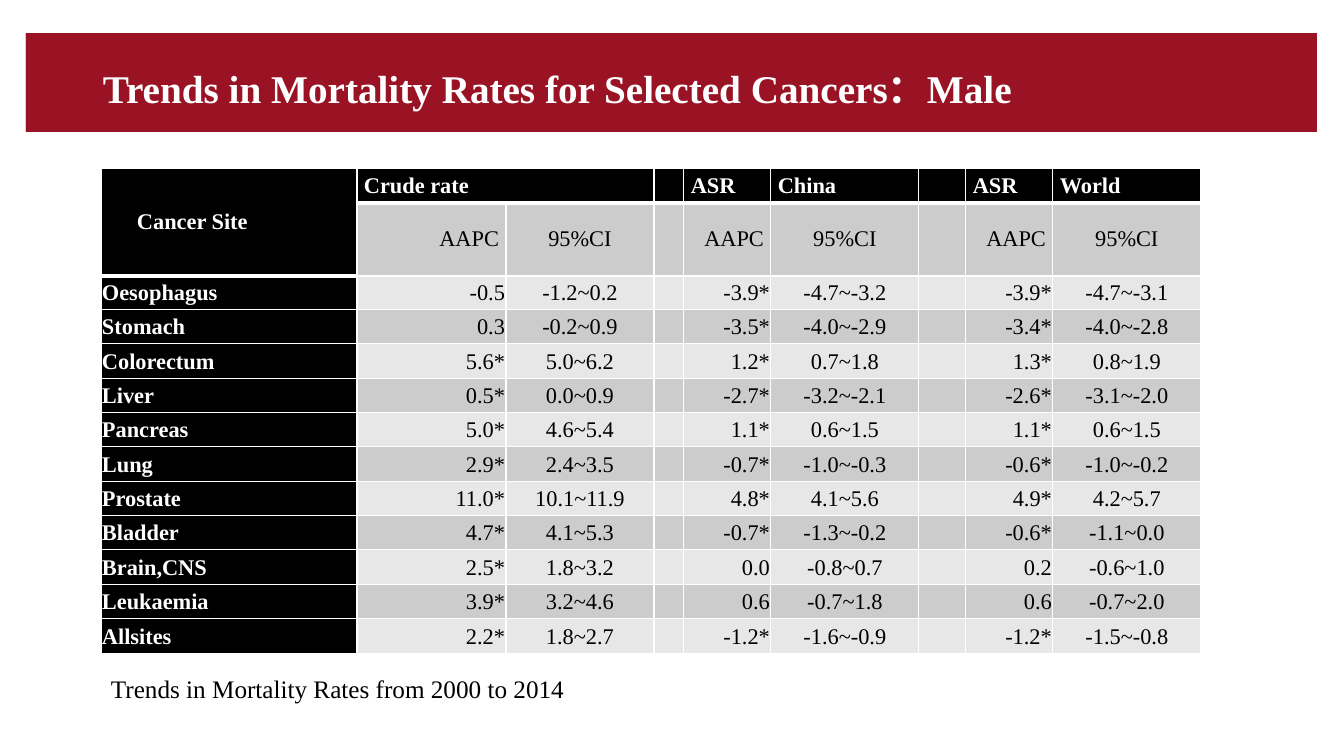
"""Build a slide with a table of mortality trends for selected cancers in men."""
from lxml import etree
from pptx import Presentation
from pptx.dml.color import RGBColor
from pptx.enum.shapes import MSO_SHAPE
from pptx.enum.text import MSO_ANCHOR, PP_ALIGN
from pptx.oxml.ns import qn
from pptx.util import Pt

PX = 914400 / 100.8
RECT = MSO_SHAPE.RECTANGLE
MIDDLE = MSO_ANCHOR.MIDDLE
LEFT, CENTER, RIGHT = PP_ALIGN.LEFT, PP_ALIGN.CENTER, PP_ALIGN.RIGHT
RED, WHITE, BLACK = "991324", "FFFFFF", "000000"
BANDS = ["E7E7E7", "CCCCCC"]


def px(n):
    return round(n * PX)


def write(tf, text, size=16, color=BLACK, bold=False, align=LEFT, spacing=None):
    p = tf.paragraphs[0]
    p.alignment = align
    p.line_spacing = spacing
    r = p.add_run()
    r.text = text
    r.font.name = "Times New Roman"
    r.font.size = Pt(size)
    r.font.bold = bold
    r.font.color.rgb = RGBColor.from_string(color)


prs = Presentation()
prs.slide_width, prs.slide_height = px(1344), px(756)
s = prs.slides.add_slide(prs.slide_layouts[6])

for width in (1291, 900):
    sp = s.shapes.add_shape(RECT, px(26), px(33), px(width), px(99))
    sp.shadow.inherit = False
    sp.fill.solid()
    sp.fill.fore_color.rgb = RGBColor.from_string(RED)
    sp.line.fill.background()

tf = s.shapes.add_textbox(px(93), px(44), px(1126), px(94)).text_frame
tf.word_wrap = True
tf.vertical_anchor = MIDDLE
write(tf, "Trends in Mortality Rates for Selected Cancers：Male",
      size=28, color=WHITE, bold=True, spacing=0.9)

rows = [
    ["Cancer Site", "Crude rate", "", "ASR", "China", "ASR", "World"],
    ["", "AAPC", "95%CI", "AAPC", "95%CI", "AAPC", "95%CI"],
    ["Oesophagus", "-0.5", "-1.2~0.2", "-3.9*", "-4.7~-3.2", "-3.9*", "-4.7~-3.1"],
    ["Stomach", "0.3", "-0.2~0.9", "-3.5*", "-4.0~-2.9", "-3.4*", "-4.0~-2.8"],
    ["Colorectum", "5.6*", "5.0~6.2", "1.2*", "0.7~1.8", "1.3*", "0.8~1.9"],
    ["Liver", "0.5*", "0.0~0.9", "-2.7*", "-3.2~-2.1", "-2.6*", "-3.1~-2.0"],
    ["Pancreas", "5.0*", "4.6~5.4", "1.1*", "0.6~1.5", "1.1*", "0.6~1.5"],
    ["Lung", "2.9*", "2.4~3.5", "-0.7*", "-1.0~-0.3", "-0.6*", "-1.0~-0.2"],
    ["Prostate", "11.0*", "10.1~11.9", "4.8*", "4.1~5.6", "4.9*", "4.2~5.7"],
    ["Bladder", "4.7*", "4.1~5.3", "-0.7*", "-1.3~-0.2", "-0.6*", "-1.1~0.0"],
    ["Brain,CNS", "2.5*", "1.8~3.2", "0.0", "-0.8~0.7", "0.2", "-0.6~1.0"],
    ["Leukaemia", "3.9*", "3.2~4.6", "0.6", "-0.7~1.8", "0.6", "-0.7~2.0"],
    ["Allsites", "2.2*", "1.8~2.7", "-1.2*", "-1.6~-0.9", "-1.2*", "-1.5~-0.8"],
]
col_widths = [256, 149, 148, 30, 87, 148, 47, 87, 148]
body_edges = [378 * i // 11 for i in range(12)]
row_heights = [35, 73] + [b - a for a, b in zip(body_edges, body_edges[1:])]
aligns = [LEFT, RIGHT, CENTER, LEFT, RIGHT, CENTER, LEFT, RIGHT, CENTER]

table = s.shapes.add_table(len(rows), len(col_widths), px(101), px(168),
                           px(sum(col_widths)), px(sum(row_heights))).table
for col, width in zip(table.columns, col_widths):
    col.width = px(width)
for row, height in zip(table.rows, row_heights):
    row.height = px(height)

for i, values in enumerate(rows):
    cells = values[:3] + [""] + values[3:5] + [""] + values[5:]
    for j, text in enumerate(cells):
        cell = table.cell(i, j)
        dark = i == 0 or j == 0
        cell.fill.solid()
        cell.fill.fore_color.rgb = RGBColor.from_string(BLACK if dark else BANDS[i % 2])
        cell.vertical_anchor = MIDDLE
        cell.margin_left = cell.margin_right = px(7 if i < 2 else 1)
        cell.margin_top = px(0 if i < 2 else 1)
        cell.margin_bottom = 0
        if text:
            write(cell.text_frame, text, color=WHITE if dark else BLACK, bold=dark,
                  align=LEFT if dark else aligns[j])

        head_rows = 2 if j == 0 else 1
        edges = {"a:lnL": 1, "a:lnR": 1, "a:lnT": 3 if i == head_rows else 1,
                 "a:lnB": 3 if i < head_rows else 1}
        tc_pr = cell._tc.get_or_add_tcPr()
        for k, (tag, weight) in enumerate(edges.items()):
            ln = etree.Element(qn(tag), w=str(Pt(weight)))
            fill = etree.SubElement(ln, qn("a:solidFill"))
            etree.SubElement(fill, qn("a:srgbClr"), val=WHITE)
            tc_pr.insert(k, ln)

table.cell(0, 0).merge(table.cell(1, 0))
table.cell(0, 1).merge(table.cell(0, 2))
table.cell(0, 0).margin_left = px(36)

tf = s.shapes.add_textbox(px(101), px(668), px(597), px(40)).text_frame
tf.word_wrap = True
write(tf, "Trends in Mortality Rates from 2000 to 2014", size=18)

prs.save("out.pptx")
